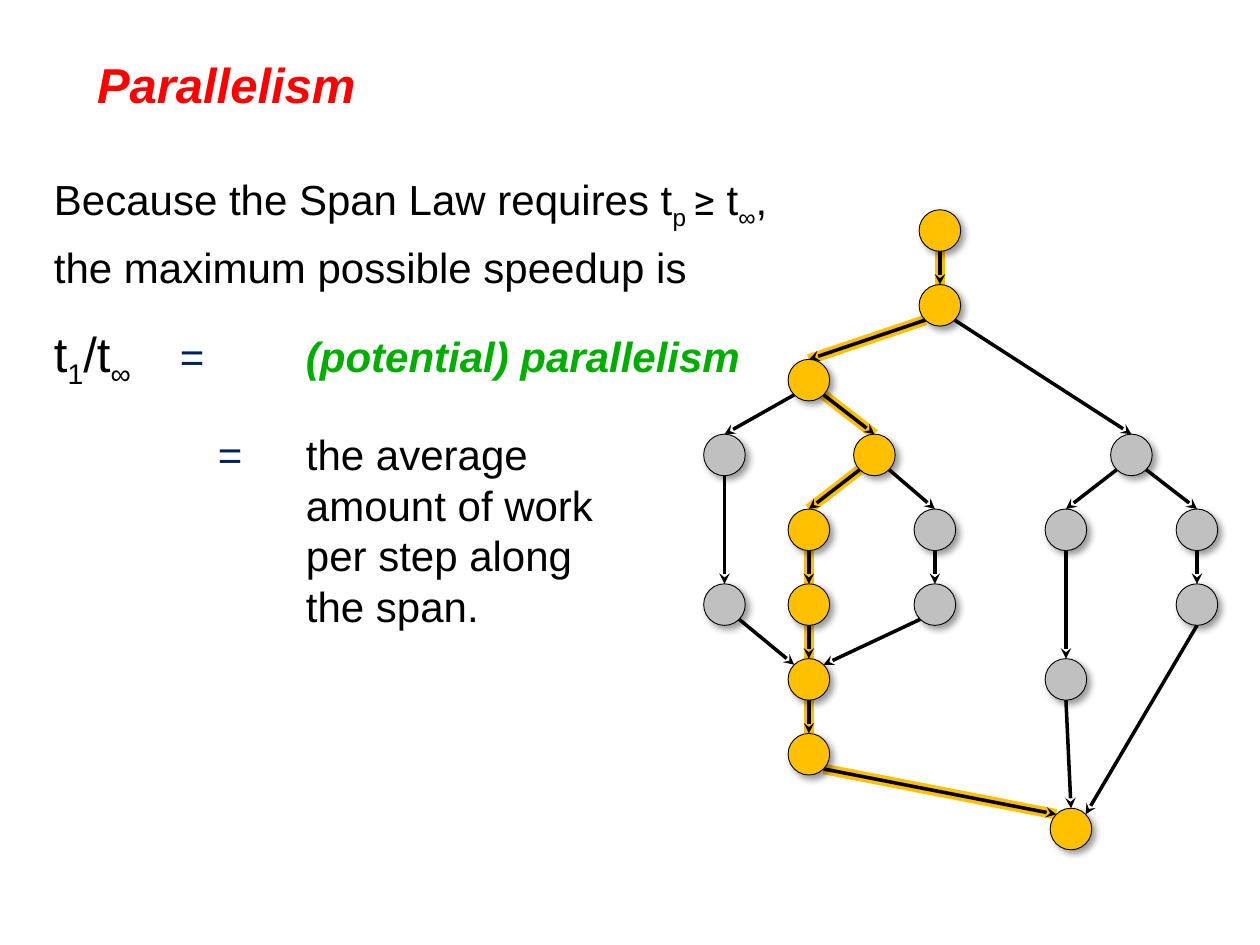
from dataclasses import dataclass
from math import sqrt

from lxml.etree import SubElement
from pptx import Presentation
from pptx.dml.color import RGBColor
from pptx.enum.shapes import MSO_CONNECTOR, MSO_SHAPE
from pptx.enum.text import MSO_ANCHOR, PP_ALIGN
from pptx.oxml.ns import qn
from pptx.shapes.shapetree import GroupShapes
from pptx.slide import Slide
from pptx.util import Inches, Pt

COLORS = {
    "red": "FF0000",
    "green": "00AE00",
    "navy": "002060",
    "black": "000000",
    "gold": "FFC000",
    "gray": "C0C0C0",
}
DIAMETER = 0.33
FIRST_ROW = 1.83
ROW_STEP = 4.75 / 8
DIAGONAL = 1 / sqrt(2)
PORTS = {
    "N": (0, -1),
    "S": (0, 1),
    "NW": (-DIAGONAL, -DIAGONAL),
    "NE": (DIAGONAL, -DIAGONAL),
    "SW": (-DIAGONAL, DIAGONAL),
    "SE": (DIAGONAL, DIAGONAL),
}


@dataclass
class Node:
    center_x: float
    row: int
    color: str = "gray"

    def port(self, name: str) -> tuple[float, float]:
        """Return the point on the rim that faces the named direction."""
        across, down = PORTS[name]
        radius = DIAMETER / 2
        center_y = FIRST_ROW + self.row * ROW_STEP
        return self.center_x + across * radius, center_y + down * radius


@dataclass
class Edge:
    start: str
    start_port: str
    end: str
    end_port: str = "N"


NODES = {
    "root": Node(7.46, 0, "gold"),
    "fork": Node(7.46, 1, "gold"),
    "left fork": Node(6.42, 2, "gold"),
    "inner fork": Node(6.94, 3, "gold"),
    "span 1": Node(6.42, 4, "gold"),
    "span 2": Node(6.42, 5, "gold"),
    "left join": Node(6.42, 6, "gold"),
    "span 3": Node(6.42, 7, "gold"),
    "final join": Node(8.5, 8, "gold"),
    "outer 1": Node(5.75, 3),
    "outer 2": Node(5.75, 5),
    "inner 1": Node(7.42, 4),
    "inner 2": Node(7.42, 5),
    "right fork": Node(8.98, 3),
    "near 1": Node(8.46, 4),
    "near 2": Node(8.46, 6),
    "far 1": Node(9.5, 4),
    "far 2": Node(9.5, 5),
}
SPAN_EDGES = [
    Edge("root", "S", "fork"),
    Edge("fork", "SW", "left fork"),
    Edge("left fork", "SE", "inner fork"),
    Edge("inner fork", "SW", "span 1"),
    Edge("span 1", "S", "span 2"),
    Edge("span 2", "S", "left join"),
    Edge("left join", "S", "span 3"),
    Edge("span 3", "SE", "final join", "NW"),
]
OTHER_EDGES = [
    Edge("fork", "SE", "right fork"),
    Edge("left fork", "SW", "outer 1"),
    Edge("outer 1", "S", "outer 2"),
    Edge("inner fork", "SE", "inner 1"),
    Edge("outer 2", "SE", "left join", "NW"),
    Edge("right fork", "SE", "far 1"),
    Edge("inner 2", "SW", "left join", "NE"),
    Edge("inner 1", "S", "inner 2"),
    Edge("right fork", "SW", "near 1"),
    Edge("near 1", "S", "near 2"),
    Edge("far 1", "S", "far 2"),
    Edge("far 2", "S", "final join", "NE"),
    Edge("near 2", "S", "final join"),
]


def rgb(name: str) -> RGBColor:
    return RGBColor.from_string(COLORS[name])


def add_text(paragraph, text: str, *, size: float = 24, color: str = "black", font: str = "Arial",
             bold: bool = False, italic: bool = False, subscript: bool = False) -> None:
    run = paragraph.add_run()
    run.text = text
    run.font.name = font
    run.font.size = Pt(size)
    run.font.color.rgb = rgb(color)
    run.font.bold = bold
    run.font.italic = italic
    if subscript:
        run.font._element.set("baseline", "-25000")


def set_tabs(paragraph, *positions: float) -> None:
    tab_list = SubElement(paragraph._p.get_or_add_pPr(), qn("a:tabLst"))
    for position in positions:
        SubElement(tab_list, qn("a:tab"), pos=str(Inches(position)), algn="l")


def add_edge(shapes: GroupShapes, edge: Edge, color: str, width: float, arrow: bool) -> None:
    start = NODES[edge.start].port(edge.start_port)
    end = NODES[edge.end].port(edge.end_port)
    connector = shapes.add_connector(MSO_CONNECTOR.STRAIGHT, *map(Inches, start + end))
    connector.line.color.rgb = rgb(color)
    connector.line.width = Pt(width)
    if arrow:
        SubElement(connector.line._get_or_add_ln(), qn("a:tailEnd"), type="stealth")
    SubElement(connector._element.spPr, qn("a:effectLst"))


def add_node(shapes: GroupShapes, node: Node) -> None:
    left = node.center_x - DIAMETER / 2
    top = node.port("N")[1]
    shape = shapes.add_shape(MSO_SHAPE.OVAL, *map(Inches, (left, top, DIAMETER, DIAMETER)))
    shape.fill.solid()
    shape.fill.fore_color.rgb = rgb(node.color)
    shape.line.color.rgb = rgb("black")
    shape.line.width = Pt(0.5)
    shape.shadow.inherit = False
    effects = shape._element.spPr.find(qn("a:effectLst"))
    shadow = SubElement(effects, qn("a:outerShdw"), blurRad=str(Pt(4)), dist=str(Pt(3)),
                        dir=str(45 * 60000), algn="tl", rotWithShape="0")
    shadow_color = SubElement(shadow, qn("a:srgbClr"), val=COLORS["black"])
    SubElement(shadow_color, qn("a:alpha"), val="40000")


def add_title(slide: Slide) -> None:
    title = slide.shapes.title
    title.left, title.top, title.width, title.height = map(Inches, (0.67, 0.33, 8.19, 0.67))
    title.text_frame.vertical_anchor = MSO_ANCHOR.MIDDLE
    paragraph = title.text_frame.paragraphs[0]
    paragraph.alignment = PP_ALIGN.LEFT
    add_text(paragraph, "Parallelism", size=28, color="red", bold=True, italic=True)


def add_explanation(slide: Slide) -> None:
    text_box = slide.shapes.add_textbox(*map(Inches, (0.33, 1.33, 6.42, 4.75)))
    frame = text_box.text_frame
    frame.word_wrap = True
    law, speedup, ratio, average = [frame.paragraphs[0]] + [frame.add_paragraph() for _ in range(3)]
    for paragraph, space in ((law, 2), (speedup, 6), (ratio, 18), (average, 22)):
        paragraph.space_before = Pt(space)

    add_text(law, "Because the Span Law requires t")
    add_text(law, "p ", subscript=True)
    add_text(law, "≥", font="Roboto")
    add_text(law, " t")
    add_text(law, "∞", subscript=True)
    add_text(law, ",")
    add_text(speedup, "the maximum possible speedup is")

    set_tabs(ratio, 1, 2)
    add_text(ratio, "t", size=28)
    add_text(ratio, "1", size=28, subscript=True)
    add_text(ratio, "/t", size=28)
    add_text(ratio, "∞", size=28, subscript=True)
    add_text(ratio, "\t=\t", color="navy")
    add_text(ratio, "(potential) parallelism", color="green", bold=True, italic=True)

    set_tabs(average, 1.3, 2)
    add_text(average, "\t=\t", color="navy")
    for index, line in enumerate(("the average", "amount of work", "per step along", "the span.")):
        if index:
            average.add_line_break()
            add_text(average, "\t\t")
        add_text(average, line)


def add_task_graph(slide: Slide) -> None:
    shapes = slide.shapes.add_group_shape().shapes
    for edge in SPAN_EDGES:
        add_edge(shapes, edge, "gold", 6, arrow=False)
    for edge in SPAN_EDGES:
        add_edge(shapes, edge, "black", 2, arrow=True)
    for node in NODES.values():
        add_node(shapes, node)
    for edge in OTHER_EDGES:
        add_edge(shapes, edge, "black", 2, arrow=True)


def main() -> None:
    presentation = Presentation()
    presentation.slide_width, presentation.slide_height = Inches(10), Inches(7.5)
    slide = presentation.slides.add_slide(presentation.slide_layouts[5])
    add_title(slide)
    add_explanation(slide)
    add_task_graph(slide)
    presentation.save("out.pptx")


if __name__ == "__main__":
    main()
